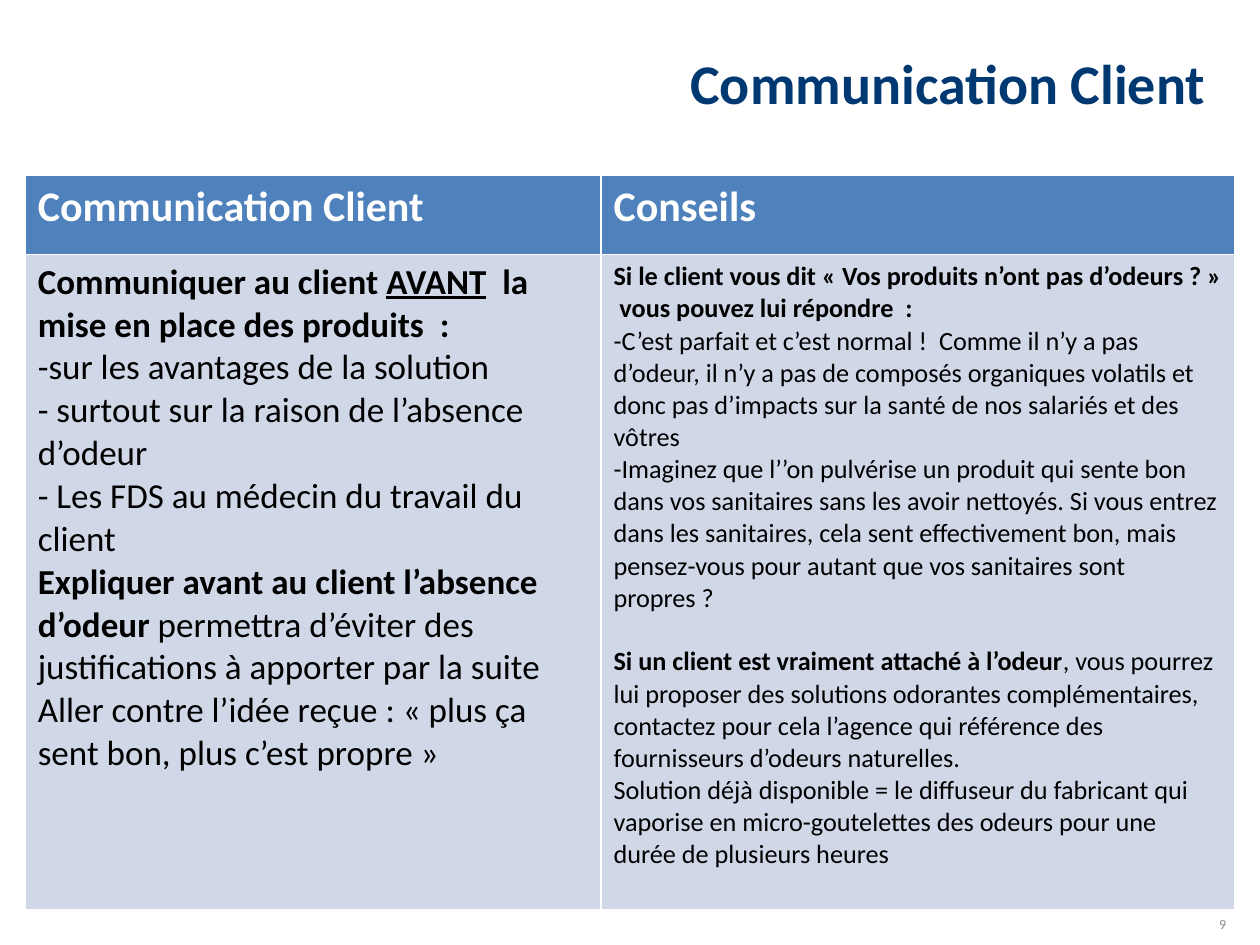
from pptx import Presentation
from pptx import util as u
from pptx.dml.color import RGBColor
from pptx.enum import text

FONT = "Calibri"
HEADERS = ["Communication Client", "Conseils"]
COMMUNICATION = [
    [("Communiquer au client ", "b"), ("AVANT", "bu"), ("  la mise en place des produits  :", "b")],
    [("-sur les avantages de la solution", "")],
    [("- surtout sur la raison de l’absence d’odeur", "")],
    [("- Les FDS au médecin du travail du client", "")],
    [("Expliquer avant au client l’absence d’odeur ", "b"),
     ("permettra d’éviter des justifications à apporter par la suite "
      "Aller contre l’idée reçue : « plus ça sent bon, plus c’est propre »", "")],
]
CONSEILS = [
    [("Si le client vous dit « Vos produits n’ont pas d’odeurs ? »\n vous pouvez lui répondre  :", "b")],
    [("-C’est parfait et c’est normal !  Comme il n’y a pas d’odeur, il n’y a pas de composés "
      "organiques volatils et donc pas d’impacts sur la santé de nos salariés et des vôtres", "")],
    [("-Imaginez que l’’on pulvérise un produit qui sente bon dans vos sanitaires sans les avoir "
      "nettoyés. Si vous entrez dans les sanitaires, cela sent effectivement bon, mais "
      "pensez-vous pour autant que vos sanitaires sont propres ?", "")],
    [("Si un client est vraiment attaché à l’odeur", "b"),
     (", vous pourrez lui proposer des solutions odorantes complémentaires, contactez pour cela "
      "l’agence qui référence des fournisseurs d’odeurs naturelles.", "")],
    [("Solution déjà disponible = le diffuseur du fabricant qui vaporise en micro-goutelettes "
      "des odeurs pour une durée de plusieurs heures", "")],
]


def rgb(value):
    """Return the colour for a hex string."""
    return RGBColor.from_string(value)


def style(font, size, color, bold=False, underline=False):
    """Set the look of a font."""
    font.name, font.size, font.bold = FONT, u.Pt(size), bold
    font.underline = underline
    font.color.rgb = rgb(color)


def place(sp, left, top, width, height):
    """Position a shape in inches."""
    sp.left, sp.top = u.Inches(left), u.Inches(top)
    sp.width, sp.height = u.Inches(width), u.Inches(height)


def add_title(slide, words):
    """Fill the title placeholder."""
    sp = slide.shapes.title
    place(sp, 0.67, 0.03, 9, 1.25)
    tf = sp.text_frame
    tf.text = words
    tf.vertical_anchor = text.MSO_ANCHOR.MIDDLE
    p = tf.paragraphs[0]
    p.alignment = text.PP_ALIGN.RIGHT
    style(p.runs[0].font, 32, "003871", bold=True)


def add_page_number(slide, number):
    """Add the page number at the bottom right."""
    sp = slide.shapes.add_textbox(u.Inches(9.08), u.Inches(7.22), u.Inches(0.75), u.Inches(0.2))
    tf = sp.text_frame
    tf.word_wrap = True
    tf.text = number
    p = tf.paragraphs[0]
    p.alignment = text.PP_ALIGN.RIGHT
    style(p.runs[0].font, 8, "8C8C8C")


def fill_cell(cell, paragraphs, size, color, fill):
    """Write styled paragraphs into a filled cell."""
    cell.fill.solid()
    cell.fill.fore_color.rgb = rgb(fill)
    tf = cell.text_frame
    for i, parts in enumerate(paragraphs):
        p = tf.add_paragraph() if i else tf.paragraphs[0]
        for words, marks in parts:
            for j, line in enumerate(words.split("\n")):
                if j:
                    p.add_line_break()
                r = p.add_run()
                r.text = line
                style(r.font, size, color, "b" in marks, "u" in marks)


def add_advice_table(slide):
    """Add the two-column table of messages and advice."""
    table = slide.shapes.add_table(
        2, 2, u.Inches(0.2), u.Inches(1.39), u.Inches(9.6), u.Inches(5.83)).table
    for column, width in zip(table.columns, (4.57, 5.03)):
        column.width = u.Inches(width)
    for row, height in zip(table.rows, (0.63, 5.2)):
        row.height = u.Inches(height)
    for i, header in enumerate(HEADERS):
        fill_cell(table.cell(0, i), [[(header, "b")]], 24, "FFFFFF", "4F81BD")
    for i, (paragraphs, size) in enumerate([(COMMUNICATION, 20), (CONSEILS, 15)]):
        fill_cell(table.cell(1, i), paragraphs, size, "000000", "D0D8E8")
    table.cell(1, 1).text_frame.paragraphs[3].space_before = u.Pt(18)


def main():
    """Build and save the slide."""
    prs = Presentation()
    prs.slide_width, prs.slide_height = u.Inches(10), u.Inches(7.5)
    slide = prs.slides.add_slide(prs.slide_layouts[5])
    add_title(slide, "Communication Client")
    add_page_number(slide, "9")
    add_advice_table(slide)
    prs.save("out.pptx")


if __name__ == "__main__":
    main()
